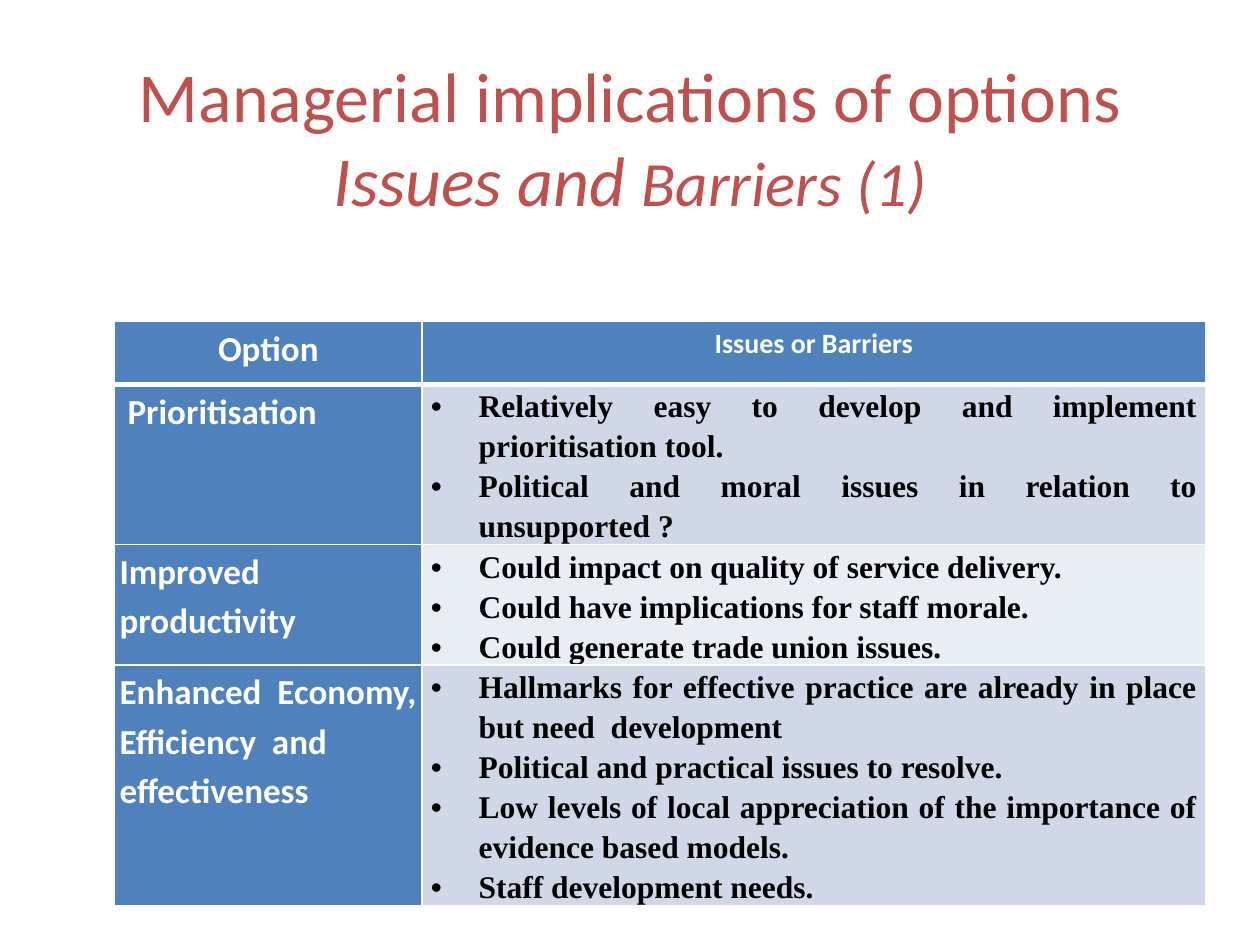
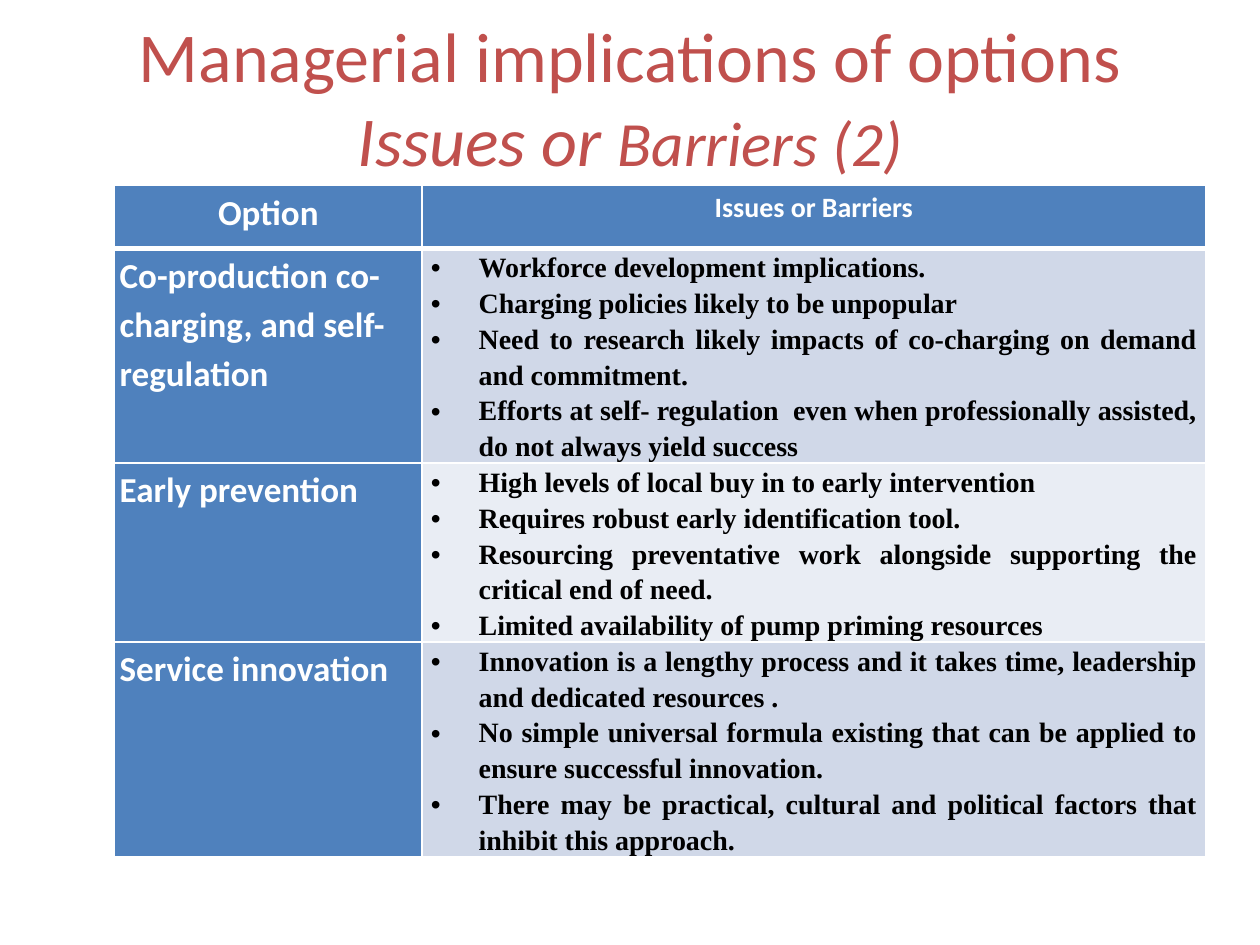
from lxml.etree import SubElement
from pptx import Presentation
from pptx.dml.color import RGBColor
from pptx.enum.text import MSO_ANCHOR, MSO_AUTO_SIZE, PP_ALIGN
from pptx.oxml.ns import qn
from pptx.util import Inches, Pt

COLOURS = {
    "title": "C0504D",
    "header": "4F81BD",
    "band_dark": "D0D8E8",
    "band_light": "E9EDF4",
    "light": "FFFFFF",
    "dark": "000000",
}
TITLE_FONT = {"name": "Calibri", "size": Pt(40), "bold": False}
LABEL_FONT = {"name": "Calibri", "size": Pt(20), "bold": True}
ISSUE_FONT = {"name": "Times New Roman", "bold": True}
LABEL_MARGIN, ISSUE_MARGIN = 0.04, 0.07
BULLET_INDENT = Inches(0.38)
COLUMN_WIDTHS = (2.44, 6.22)
HEADER_HEIGHT = 0.5

SLIDES = [
    {
        "subtitle": ("Issues and ", "Barriers (1)"),
        "title_box": (0.5, 0.3, 9, 1.56),
        "table_origin": (0.91, 2.55),
        "issue_size": 18,
        "options": [
            (" Prioritisation", 1.27, [
                "Relatively easy to develop and implement prioritisation tool.",
                "Political and moral issues in relation to unsupported ?",
            ]),
            ("Improved productivity", 0.95, [
                "Could impact on quality of service delivery.",
                "Could have implications for staff morale.",
                "Could generate trade union issues.",
            ]),
            ("Enhanced  Economy, Efficiency  and effectiveness", 1.9, [
                "Hallmarks for effective practice are already in place but need  development",
                "Political and practical issues to resolve.",
                "Low levels of local appreciation of the importance of evidence based models.",
                "Staff development needs.",
            ]),
        ],
    },
    {
        "subtitle": ("Issues or ", "Barriers (2)"),
        "title_box": (0.5, 0.3, 9, 0.93),
        "table_origin": (0.91, 1.47),
        "issue_size": 16,
        "options": [
            ("Co-production co-charging, and self-regulation", 1.7, [
                "Workforce development implications.",
                "Charging policies likely to be unpopular",
                "Need to research likely impacts of co-charging on demand and commitment.",
                "Efforts at self- regulation  even when professionally assisted, "
                "do not always yield success",
            ]),
            ("Early prevention", 1.41, [
                "High levels of local buy in to early intervention",
                "Requires robust early identification tool.",
                "Resourcing preventative work alongside supporting the critical end of need.",
                "Limited availability of pump priming resources",
            ]),
            ("Service innovation", 1.7, [
                "Innovation is a lengthy process and it takes time, leadership "
                "and dedicated resources .",
                "No simple universal formula existing that can be applied to "
                "ensure successful innovation.",
                "There may be practical, cultural and political factors that "
                "inhibit this approach.",
            ]),
        ],
    },
]


def apply_format(target, values):
    """Set each attribute named in values on the target."""
    for attribute, value in values.items():
        setattr(target, attribute, value)


def add_text(paragraph, text, colour, **font_values):
    """Add a formatted run to the paragraph."""
    run = paragraph.add_run()
    run.text = text
    apply_format(run.font, font_values)
    run.font.color.rgb = RGBColor.from_string(COLOURS[colour])


def add_bullet(paragraph):
    """Give the paragraph a hanging bullet."""
    properties = paragraph._p.get_or_add_pPr()
    properties.set("marL", str(BULLET_INDENT))
    properties.set("indent", str(-BULLET_INDENT))
    SubElement(properties, qn("a:buFont"), typeface="Arial")
    SubElement(properties, qn("a:buChar"), char="•")


def add_borders(cell, bottom):
    """Draw white rules around the cell, with the given top and bottom weights."""
    properties = cell._tc.get_or_add_tcPr()
    for side, weight in {"L": 1, "R": 1, "T": 1, "B": bottom}.items():
        rule = SubElement(properties, qn(f"a:ln{side}"), w=str(Pt(weight)))
        fill = SubElement(rule, qn("a:solidFill"))
        SubElement(fill, qn("a:srgbClr"), val=COLOURS["light"])


def fill_cell(cell, texts, fill, colour, font, align, margin=LABEL_MARGIN,
              bulleted=False, bottom=1):
    """Write one paragraph per text into a ruled and coloured cell."""
    apply_format(cell, {
        "margin_left": Inches(margin), "margin_right": Inches(margin),
        "margin_top": 0, "margin_bottom": 0,
        "vertical_anchor": MSO_ANCHOR.TOP,
    })
    add_borders(cell, bottom)
    cell.fill.solid()
    cell.fill.fore_color.rgb = RGBColor.from_string(COLOURS[fill])
    frame = cell.text_frame
    for index, text in enumerate(texts):
        paragraph = frame.add_paragraph() if index else frame.paragraphs[0]
        apply_format(paragraph, {"alignment": align, "line_spacing": 1.15})
        if bulleted:
            add_bullet(paragraph)
        add_text(paragraph, text, colour, **font)


def add_title(slide, box, subtitle):
    """Place the two-line title in its box."""
    title = slide.shapes.title
    apply_format(title, dict(zip(("left", "top", "width", "height"), map(Inches, box))))
    apply_format(title.text_frame, {
        "vertical_anchor": MSO_ANCHOR.MIDDLE, "auto_size": MSO_AUTO_SIZE.NONE,
        "word_wrap": True,
    })
    paragraph = title.text_frame.paragraphs[0]
    paragraph.alignment = PP_ALIGN.CENTER
    add_text(paragraph, "Managerial implications of options", "title", **TITLE_FONT)
    paragraph.add_line_break()
    lead, topic = subtitle
    add_text(paragraph, lead, "title", **TITLE_FONT, italic=True)
    add_text(paragraph, topic, "title", **{**TITLE_FONT, "size": Pt(36)}, italic=True)


def add_options_table(slide, origin, options, issue_size):
    """Build the table of options and their issues from its top left corner."""
    heights = [HEADER_HEIGHT] + [height for _, height, _ in options]
    box = (*origin, sum(COLUMN_WIDTHS), sum(heights))
    table = slide.shapes.add_table(len(heights), 2, *map(Inches, box)).table
    apply_format(table, {"first_row": False, "horz_banding": False})
    for column, width in zip(table.columns, COLUMN_WIDTHS):
        column.width = Inches(width)
    for row, height in zip(table.rows, heights):
        row.height = Inches(height)

    for column, (heading, size) in enumerate((("Option", 20), ("Issues or Barriers", 16))):
        fill_cell(table.cell(0, column), [heading], "header", "light",
                  {**LABEL_FONT, "size": Pt(size)}, PP_ALIGN.CENTER, bottom=3)
    for row, (option, _, issues) in enumerate(options, 1):
        band = "band_dark" if row % 2 else "band_light"
        fill_cell(table.cell(row, 0), [option], "header", "light",
                  LABEL_FONT, PP_ALIGN.LEFT)
        fill_cell(table.cell(row, 1), issues, band, "dark",
                  {**ISSUE_FONT, "size": Pt(issue_size)}, PP_ALIGN.JUSTIFY,
                  ISSUE_MARGIN, bulleted=True)


def add_options_slide(presentation, content):
    """Add a slide with a title and an options table."""
    slide = presentation.slides.add_slide(presentation.slide_layouts[5])
    add_title(slide, content["title_box"], content["subtitle"])
    add_options_table(slide, content["table_origin"], content["options"],
                      content["issue_size"])


def main():
    """Build and save the presentation."""
    presentation = Presentation()
    apply_format(presentation, {"slide_width": Inches(10), "slide_height": Inches(7.5)})
    for content in SLIDES:
        add_options_slide(presentation, content)
    presentation.save("out.pptx")


if __name__ == "__main__":
    main()
